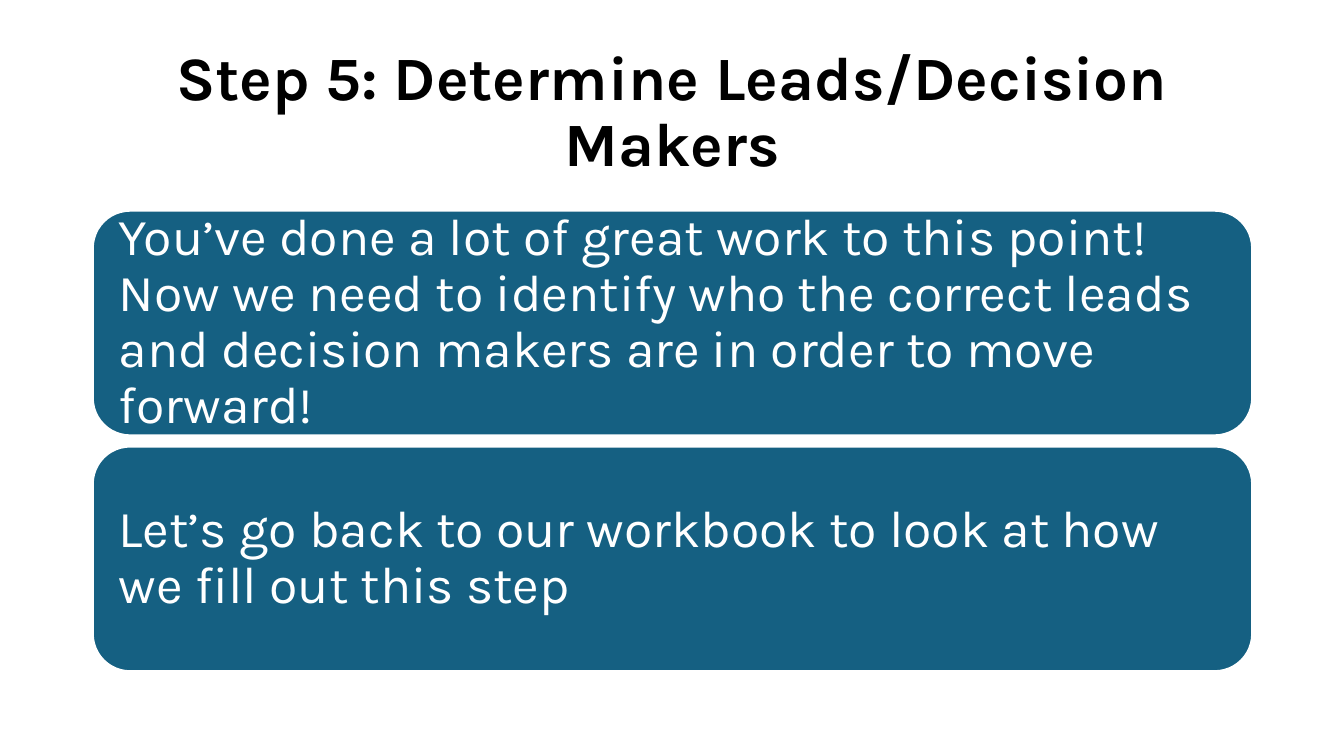
from pptx import Presentation
from pptx.dml.color import RGBColor
from pptx.enum.shapes import MSO_SHAPE
from pptx.enum.text import MSO_ANCHOR, PP_ALIGN
from pptx.util import Inches, Pt

WIDE, HIGH = 13.33, 7.5
LEFT, SPAN = 0.92, 11.5
TITLE = "Step 5: Determine Leads/Decision Makers"
NOTES = [
    "You’ve done a lot of great work to this point! Now we need to identify "
    "who the correct leads and decision makers are in order to move forward!",
    "Let’s go back to our workbook to look at how we fill out this step",
]


def color(code):
    return RGBColor.from_string(code)


def write(shape, text, size, tint, align, bold=False):
    frame = shape.text_frame
    frame.word_wrap = True
    frame.vertical_anchor = MSO_ANCHOR.MIDDLE
    line = frame.paragraphs[0]
    line.text = text
    line.alignment = align
    line.line_spacing = 0.9
    font = line.font
    font.name, font.size, font.bold = "Karla", Pt(size), bold
    font.color.rgb = color(tint)
    return frame


def add_title(slide, box, text):
    shape = slide.shapes.add_textbox(*map(Inches, box))
    write(shape, text, 44, "000000", PP_ALIGN.CENTER, bold=True)


def add_cards(slide, box, notes, gap=0.11):
    """Stack equal rounded cards, one per note, to fill the box."""
    left, top, width, height = box
    tall = (height - gap * (len(notes) - 1)) / len(notes)
    for row, note in enumerate(notes):
        place = left, top + row * (tall + gap), width, tall
        card = slide.shapes.add_shape(
            MSO_SHAPE.ROUNDED_RECTANGLE, *map(Inches, place))
        card.shadow.inherit = False
        card.fill.solid()
        card.fill.fore_color.rgb = color("156082")
        card.line.color.rgb = color("FFFFFF")
        card.line.width = Pt(1.5)
        frame = write(card, note, 37, "FFFFFF", PP_ALIGN.LEFT)
        frame.margin_left = frame.margin_right = Inches(0.15)
        frame.margin_top = frame.margin_bottom = Inches(0.15)


def main():
    deck = Presentation()
    deck.slide_width, deck.slide_height = Inches(WIDE), Inches(HIGH)
    slide = deck.slides.add_slide(deck.slide_layouts[6])
    add_title(slide, (LEFT, 0.4, SPAN, 1.45), TITLE)
    add_cards(slide, (LEFT, 2.09, SPAN, 4.57), NOTES)
    deck.save("out.pptx")


if __name__ == "__main__":
    main()
